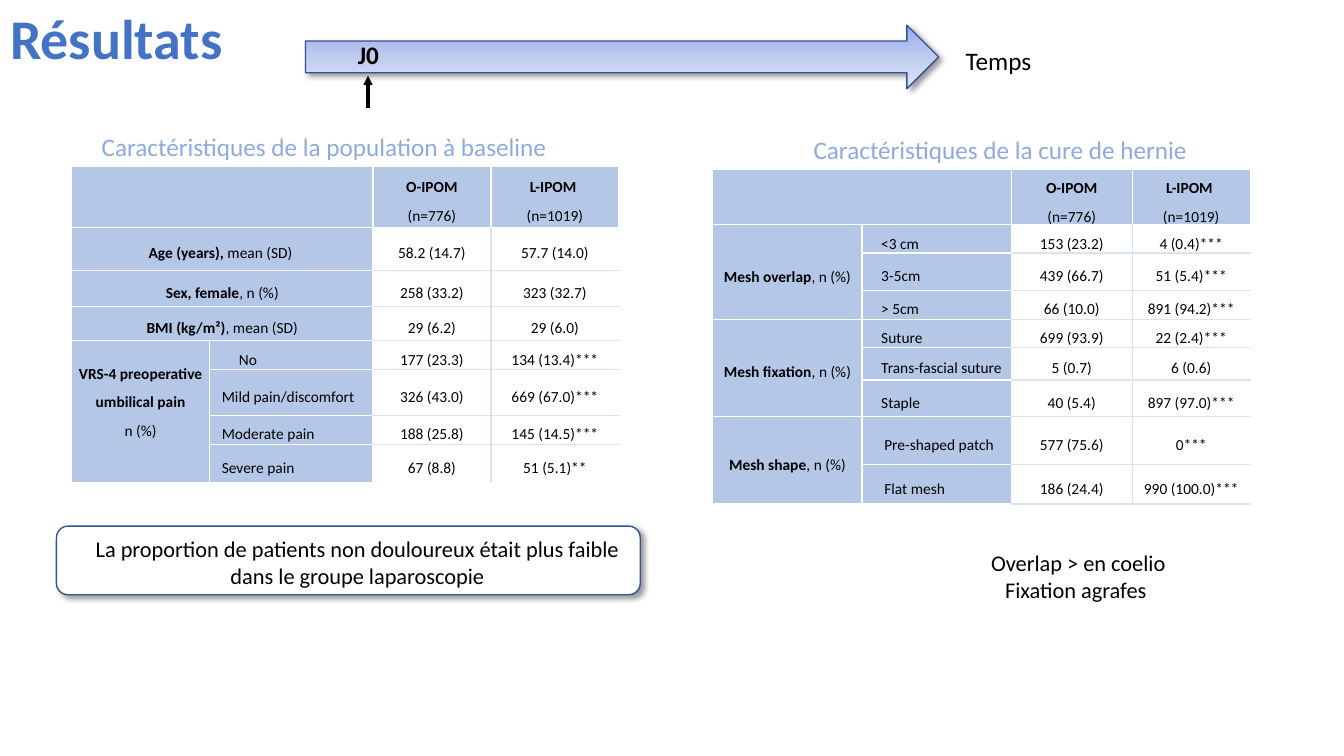
"""Builds the results slide comparing open and laparoscopic hernia repair."""
from copy import deepcopy
from dataclasses import dataclass

from lxml.etree import SubElement
from pptx import Presentation
from pptx.dml.color import RGBColor
from pptx.enum.shapes import MSO_CONNECTOR, MSO_SHAPE
from pptx.enum.text import MSO_ANCHOR, MSO_AUTO_SIZE, PP_ALIGN
from pptx.oxml.ns import qn
from pptx.util import Inches, Pt


@dataclass(frozen=True)
class Theme:
    font: str = "Calibri"
    title: str = "4472C4"
    caption: str = "8FAADC"
    ink: str = "000000"
    paper: str = "FFFFFF"
    outline: str = "325491"
    label_fill: str = "B4C7E7"
    grid: str = "DAE3F3"
    arrow_stops: tuple = ((0, "96ABEA"), (0.5, "C0CBF0"), (1, "E0E5F7"))
    title_size: int = 40
    heading_size: int = 18
    body_size: int = 16
    table_size: int = 11


def write_text(frame, paragraphs, *, font, size, color, bold=False,
               align=PP_ALIGN.LEFT, spacing=None, indent=0):
    """Fill a frame with paragraphs, each a string or a list of (text, bold) spans."""
    for index, content in enumerate(paragraphs):
        para = frame.add_paragraph() if index else frame.paragraphs[0]
        para.alignment = align
        if spacing:
            para.line_spacing = spacing
        if indent:
            para._p.get_or_add_pPr().set("marL", str(Inches(indent)))
        spans = [(content, bold)] if isinstance(content, str) else content
        for words, heavy in spans:
            span = para.add_run()
            span.text = words
            span.font.name = font
            span.font.size = Pt(size)
            span.font.bold = heavy
            span.font.color.rgb = RGBColor.from_string(color)


class SlideBuilder:
    """Draws styled elements on the current slide."""

    def __init__(self, page, theme):
        self.page = page
        self.theme = theme

    def title(self, words, *area):
        box = self.page.shapes.title
        box.left, box.top, box.width, box.height = map(Inches, area)
        frame = box.text_frame
        frame.auto_size = MSO_AUTO_SIZE.NONE
        frame.vertical_anchor = MSO_ANCHOR.MIDDLE
        write_text(frame, [words], font=self.theme.font, size=self.theme.title_size,
                   color=self.theme.title, bold=True, spacing=0.9)

    def text(self, paragraphs, *area, size, color=None, wrap=False, **text_format):
        box = self.page.shapes.add_textbox(*map(Inches, area))
        box.text_frame.word_wrap = wrap
        write_text(box.text_frame, paragraphs, font=self.theme.font, size=size,
                   color=color or self.theme.ink, **text_format)

    def shape(self, kind, *area, stops=None):
        box = self.page.shapes.add_shape(kind, *map(Inches, area))
        if stops:
            box.fill.gradient()
            box.fill.gradient_angle = 270
            stop_list = next(box._element.spPr.iter(qn("a:gsLst")))
            stop_list.insert(1, deepcopy(stop_list[0]))
            for stop, (position, color) in zip(box.fill.gradient_stops, stops):
                stop.position = position
                stop.color.rgb = RGBColor.from_string(color)
        else:
            box.fill.solid()
            box.fill.fore_color.rgb = RGBColor.from_string(self.theme.paper)
        box.line.color.rgb = RGBColor.from_string(self.theme.outline)
        box.line.width = Pt(1)
        box.shadow.inherit = False
        effects = box._element.spPr.find(qn("a:effectLst"))
        shadow = SubElement(effects, qn("a:outerShdw"), blurRad=str(Pt(4)),
                            dist=str(Pt(3)), dir=str(45 * 60000), algn="tl", rotWithShape="0")
        shade = SubElement(shadow, qn("a:srgbClr"), val=self.theme.ink)
        SubElement(shade, qn("a:alpha"), val="40000")

    def arrow(self, *ends):
        line = self.page.shapes.add_connector(MSO_CONNECTOR.STRAIGHT, *map(Inches, ends))
        line.line.color.rgb = RGBColor.from_string(self.theme.ink)
        line.line.width = Pt(2.25)
        SubElement(line.line._get_or_add_ln(), qn("a:tailEnd"), type="triangle")
        SubElement(line._element.spPr, qn("a:effectLst"))

    def borders(self, cell, colors):
        properties = cell._tc.get_or_add_tcPr()
        for index, (side, color) in enumerate(zip("LRTB", colors)):
            edge = SubElement(properties, qn("a:ln" + side), w=str(Pt(1)))
            paint = SubElement(edge, qn("a:solidFill"))
            SubElement(paint, qn("a:srgbClr"), val=color)
            properties.insert(index, edge)

    def cell(self, cell, paragraphs, *, filled, borders, **text_format):
        cell.margin_left = cell.margin_right = Inches(0.05)
        cell.margin_top = cell.margin_bottom = 0
        cell.vertical_anchor = MSO_ANCHOR.MIDDLE
        if filled:
            cell.fill.solid()
            cell.fill.fore_color.rgb = RGBColor.from_string(self.theme.label_fill)
        else:
            cell.fill.background()
        self.borders(cell, borders)
        if paragraphs:
            write_text(cell.text_frame, paragraphs, font=self.theme.font,
                       size=self.theme.table_size, color=self.theme.ink,
                       spacing=1.5, **text_format)
        else:
            SubElement(cell.text_frame.paragraphs[0]._p, qn("a:endParaRPr"),
                       sz=str(self.theme.table_size * 100))

    def table(self, left, top, widths, heights, rows, last_edge):
        """Draw label columns and two value columns, merging labels over blank cells."""
        white, grid = self.theme.paper, self.theme.grid
        area = map(Inches, (left, top, sum(widths), sum(heights)))
        table = self.page.shapes.add_table(len(heights), len(widths), *area).table
        table.first_row = table.horz_banding = False
        for column, width in zip(table.columns, widths):
            column.width = Inches(width)
        for row, height in zip(table.rows, heights):
            row.height = Inches(height)
        header = (None, None, 0, [[("O-IPOM", True)], "(n=776)"], [[("L-IPOM ", True)], "(n=1019)"])
        final = len(rows)
        for number, (group, item, indent, *values) in enumerate([header, *rows]):
            all_white = [white] * 4
            self.cell(table.cell(number, 0), group, filled=True, borders=all_white,
                      align=PP_ALIGN.CENTER)
            self.cell(table.cell(number, 1), item and [item], filled=True, borders=all_white,
                      align=PP_ALIGN.JUSTIFY, indent=indent)
            above = white if number == 1 else grid
            below = last_edge if number == final else grid
            for column, sides in ((2, (white, grid)), (3, (grid, white))):
                value = values[column - 2]
                self.cell(table.cell(number, column), value if number == 0 else [value],
                          filled=number == 0, align=PP_ALIGN.CENTER,
                          borders=(*sides, above, below) if number else all_white)
            if not item:
                table.cell(number, 0).merge(table.cell(number, 1))
        starts = [n for n, row in enumerate(rows, 1) if row[0]] + [final + 1]
        for start, following in zip(starts, starts[1:]):
            if following - start > 1:
                table.cell(start, 0).merge(table.cell(following - 1, 0))
        return table


def label(strong, plain):
    """Return one paragraph with a bold name and a plain measure."""
    return [[(strong, True), (plain, False)]]


POPULATION = [
    (label("Age (years), ", "mean (SD) "), None, 0, "58.2 (14.7)", "57.7 (14.0)"),
    (label("Sex, female", ", n (%)"), None, 0, "258 (33.2)", "323 (32.7)"),
    (label("BMI (kg/m²)", ", mean (SD)"), None, 0, "29 (6.2)", "29 (6.0)"),
    ([[("VRS-4 preoperative umbilical pain", True)], "n (%)"], "No", 0.24, "177 (23.3)", "134 (13.4)***"),
    (None, "Mild pain/discomfort", 0.07, "326 (43.0)", "669 (67.0)***"),
    (None, "Moderate pain", 0.07, "188 (25.8)", "145 (14.5)***"),
    (None, "Severe pain", 0.07, "67 (8.8)", "51 (5.1)**"),
]
REPAIR = [
    (label("Mesh overlap", ", n (%)"), "<3 cm", 0.14, "153 (23.2)", "4 (0.4)***"),
    (None, "3-5cm", 0.14, "439 (66.7)", "51 (5.4)***"),
    (None, "> 5cm", 0.14, "66 (10.0)", "891 (94.2)***"),
    (label("Mesh fixation", ", n (%)"), "Suture", 0.14, "699 (93.9)", "22 (2.4)***"),
    (None, "Trans-fascial suture", 0.14, "5 (0.7)", "6 (0.6)"),
    (None, "Staple", 0.14, "40 (5.4)", "897 (97.0)***"),
    (label("Mesh shape", ", n (%)"), "Pre-shaped patch", 0.17, "577 (75.6)", "0***"),
    (None, "Flat mesh", 0.17, "186 (24.4)", "990 (100.0)***"),
]


def main():
    deck = Presentation()
    deck.slide_width, deck.slide_height = Inches(13.33), Inches(7.5)
    theme = Theme()
    slide = SlideBuilder(deck.slides.add_slide(deck.slide_layouts[5]), theme)
    heading, body = theme.heading_size, theme.body_size
    slide.shape(MSO_SHAPE.ROUNDED_RECTANGLE, 0.56, 5.22, 5.79, 0.68)
    slide.title("Résultats", 0, 0, 11.5, 0.83)
    slide.shape(MSO_SHAPE.RIGHT_ARROW, 3.03, 0.25, 6.28, 0.63, stops=theme.arrow_stops)
    slide.text(["J0"], 3.45, 0.34, 0.41, 0.4, size=heading, bold=True)
    population = slide.table(0.71, 1.65, (1.37, 1.62, 1.17, 1.27),
                             (0.61, 0.42, 0.36, 0.34, 0.29, 0.45, 0.29, 0.38), POPULATION, theme.paper)
    population.cell(4, 0).margin_bottom = Inches(0.28)
    slide.text(["Caractéristiques de la population à baseline"], 0.91, 1.25, 4.67, 0.4,
               size=heading, color=theme.caption)
    slide.table(7.07, 1.68, (1.48, 1.48, 1.2, 1.17),
                (0.54, 0.28, 0.37, 0.29, 0.28, 0.32, 0.36, 0.48, 0.39), REPAIR, theme.grid)
    slide.text(["Caractéristiques de la cure de hernie"], 7.97, 1.28, 3.95, 0.4,
               size=heading, color=theme.caption)
    slide.text(["Temps"], 9.48, 0.4, 0.86, 0.4, size=heading)
    slide.text(["La proportion de patients non douloureux était plus faible",
                "dans le groupe laparoscopie"], 0.79, 5.26, 5.51, 1.18,
               size=body, wrap=True, align=PP_ALIGN.CENTER)
    slide.arrow(3.65, 1.07, 3.65, 0.75)
    slide.text(["Overlap > en coelio", "Fixation agrafes "], 9.03, 5.4, 3.33, 0.64,
               size=body, wrap=True, align=PP_ALIGN.CENTER)
    deck.save("out.pptx")


if __name__ == "__main__":
    main()
